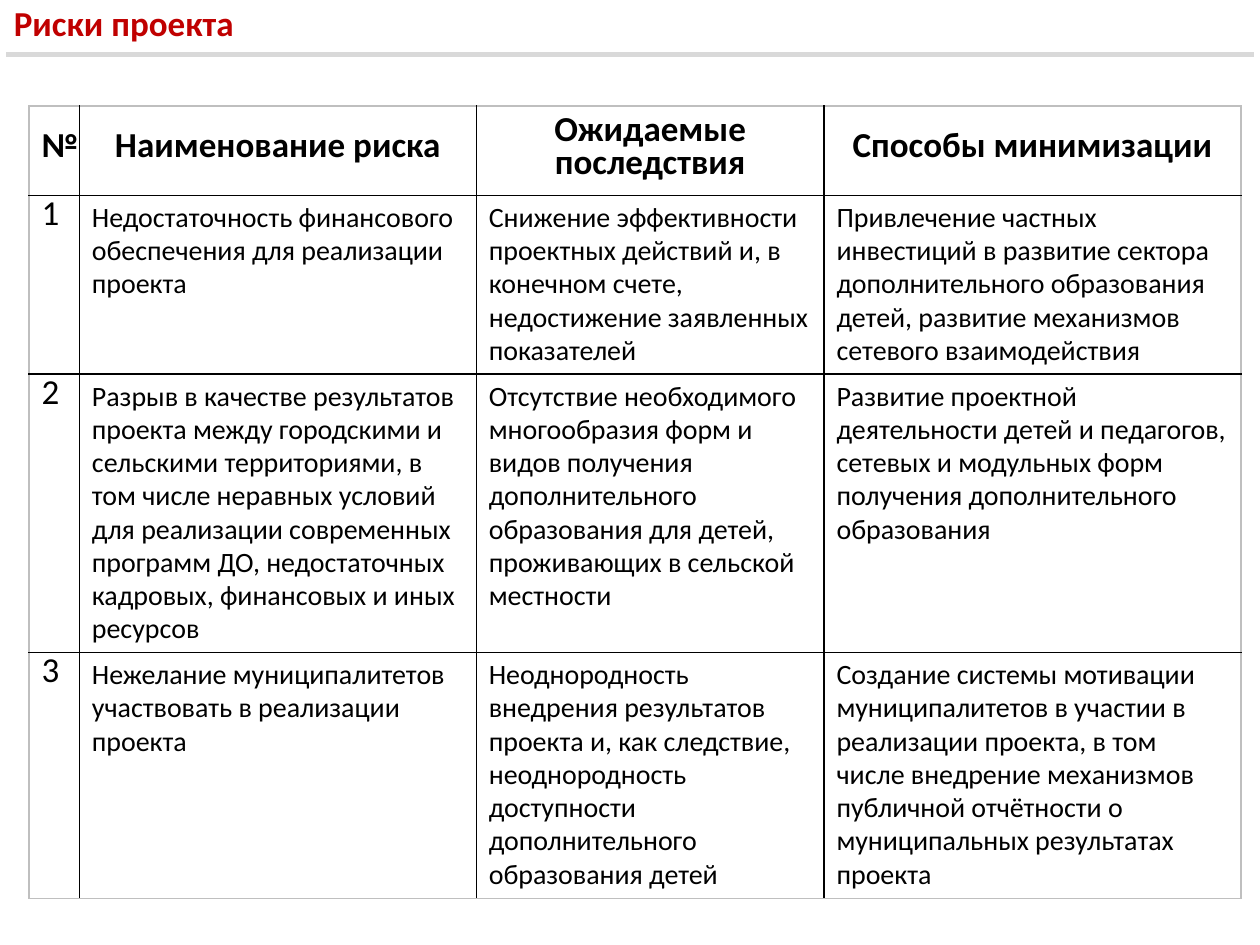
from lxml import etree
from pptx import Presentation
from pptx.dml.color import RGBColor
from pptx.enum.shapes import MSO_CONNECTOR
from pptx.enum.text import MSO_ANCHOR, MSO_AUTO_SIZE, PP_ALIGN
from pptx.oxml.ns import qn
from pptx.util import Inches, Pt

LEFT, CENTER = PP_ALIGN.LEFT, PP_ALIGN.CENTER
TOP, MIDDLE = MSO_ANCHOR.TOP, MSO_ANCHOR.MIDDLE
NO_FIT = MSO_AUTO_SIZE.NONE
STRAIGHT = MSO_CONNECTOR.STRAIGHT
TITLE_ONLY = 5

THEME = {
    "font": "Calibri",
    "title": "C00000", "text": "000000",
    "rule": "D9D9D9", "grid": "000000", "frame": "BFBFBF",
    "head_size": 20, "body_size": 16, "line_gap": 19,
}

COLS = [0.4, 3.15, 2.76, 3.31]
ROWS = [0.71, 1.42, 2.21, 1.95]
RISKS = [
    ["№", "Наименование риска", "Ожидаемые последствия", "Способы минимизации"],
    ["1",
     "Недостаточность финансового обеспечения для реализации проекта",
     "Снижение эффективности проектных действий и, в конечном счете, "
     "недостижение заявленных показателей",
     "Привлечение частных инвестиций в развитие сектора дополнительного "
     "образования детей, развитие механизмов сетевого взаимодействия"],
    ["2",
     "Разрыв в качестве результатов проекта между городскими и сельскими "
     "территориями, в том числе неравных условий для реализации современных "
     "программ ДО, недостаточных кадровых, финансовых и иных ресурсов",
     "Отсутствие необходимого многообразия форм и видов получения "
     "дополнительного образования для детей, проживающих в сельской местности",
     "Развитие проектной деятельности детей и педагогов, сетевых и модульных "
     "форм получения дополнительного образования"],
    ["3",
     "Нежелание муниципалитетов участвовать в реализации проекта",
     "Неоднородность внедрения результатов проекта и, как следствие, "
     "неоднородность доступности дополнительного образования детей",
     "Создание системы мотивации муниципалитетов в участии в реализации "
     "проекта, в том числе внедрение механизмов публичной отчётности о "
     "муниципальных результатах проекта"],
]


def write(tf, text, size, color="text", bold=False, align=LEFT, spacing=None):
    tf.word_wrap = True
    p = tf.paragraphs[0]
    p.alignment = align
    if spacing:
        p.line_spacing = Pt(spacing)
    r = p.add_run()
    r.text = text
    r.font.name = THEME["font"]
    r.font.size = Pt(THEME[size])
    r.font.bold = bold
    r.font.color.rgb = RGBColor.from_string(THEME[color])


def add_border(cell, side, color):
    ln = etree.SubElement(cell._tc.get_or_add_tcPr(), qn(f"a:ln{side}"), w=str(Pt(1)))
    fill = etree.SubElement(ln, qn("a:solidFill"))
    etree.SubElement(fill, qn("a:srgbClr"), val=THEME[color])


prs = Presentation()
prs.slide_width, prs.slide_height = Inches(10), Inches(7.5)
W = prs.slide_width
s = prs.slides.add_slide(prs.slide_layouts[TITLE_ONLY])

# Title
title = s.shapes.title
title.left, title.top = Inches(0.01), 0
title.width, title.height = Inches(8.58), Inches(0.36)
tf = title.text_frame
tf.auto_size, tf.vertical_anchor = NO_FIT, MIDDLE
write(tf, "Риски проекта", "head_size", color="title", bold=True)

# Risk table
table = s.shapes.add_table(len(ROWS), len(COLS), Inches(0.23), Inches(0.84),
                           Inches(sum(COLS)), Inches(sum(ROWS))).table
table.first_row = table.horz_banding = False
for column, width in zip(table.columns, COLS):
    column.width = Inches(width)
for row, height in zip(table.rows, ROWS):
    row.height = Inches(height)

for i, texts in enumerate(RISKS):
    for j, text in enumerate(texts):
        cell = table.cell(i, j)
        head = i == 0
        outer = {"L": j == 0, "R": j == len(COLS) - 1,
                 "T": head, "B": i == len(ROWS) - 1}
        for side, is_outer in outer.items():
            add_border(cell, side, "frame" if is_outer else "grid")
        cell.fill.background()
        cell.vertical_anchor = MIDDLE if head else TOP
        write(cell.text_frame, text, "head_size" if head or j == 0 else "body_size",
              bold=head, align=CENTER if head else LEFT, spacing=THEME["line_gap"])

# Rule under the title
y = Inches(0.43)
rule = s.shapes.add_connector(STRAIGHT, int(W * 0.005), y, int(W * 0.995), y)
rule.line.color.rgb = RGBColor.from_string(THEME["rule"])
rule.line.width = Pt(3)
etree.SubElement(rule._element.spPr, qn("a:effectLst"))

prs.save("out.pptx")
